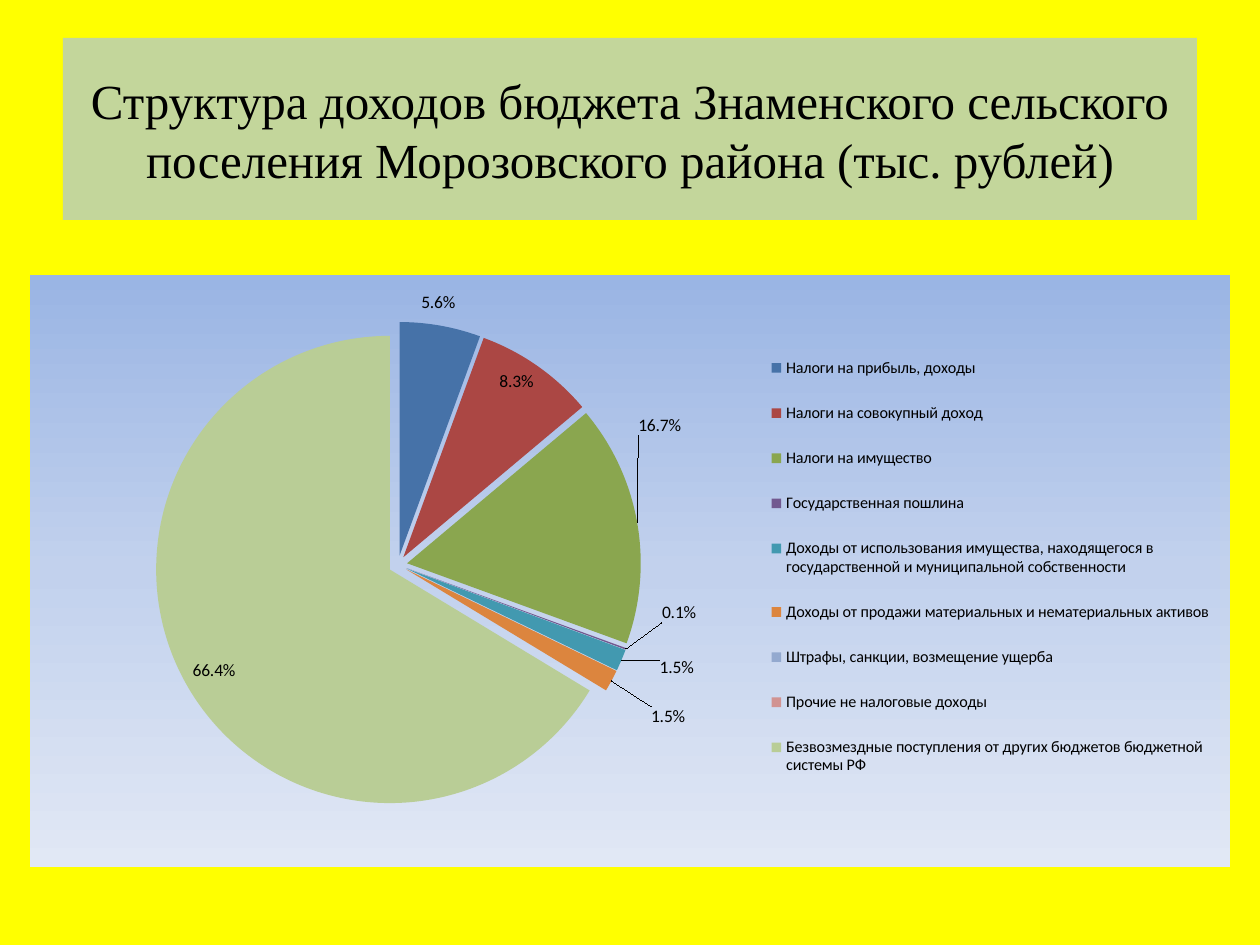
from pptx import Presentation
from pptx.chart.data import CategoryChartData
from pptx.dml.color import RGBColor
from pptx.enum.chart import XL_CHART_TYPE, XL_LABEL_POSITION, XL_LEGEND_POSITION
from pptx.enum.shapes import MSO_SHAPE
from pptx.enum.text import MSO_ANCHOR, PP_ALIGN
from pptx.oxml import parse_xml
from pptx.oxml.ns import nsdecls
from pptx.util import Pt

PIE = XL_CHART_TYPE.PIE
INSIDE_END = XL_LABEL_POSITION.INSIDE_END
LEGEND_RIGHT = XL_LEGEND_POSITION.RIGHT
RECTANGLE = MSO_SHAPE.RECTANGLE
MIDDLE = MSO_ANCHOR.MIDDLE
CENTER = PP_ALIGN.CENTER

EMU_PER_PX = 914400 / 126
YELLOW = RGBColor(0xFF, 0xFF, 0x00)
SAGE = RGBColor(0xC3, 0xD6, 0x9B)
BLACK = RGBColor(0x00, 0x00, 0x00)
BLUE = RGBColor(0x46, 0x72, 0xA8)
RED = RGBColor(0xAB, 0x47, 0x44)
GREEN = RGBColor(0x8A, 0xA6, 0x4F)
PURPLE = RGBColor(0x72, 0x59, 0x90)
TEAL = RGBColor(0x42, 0x99, 0xB0)
ORANGE = RGBColor(0xDC, 0x85, 0x3E)
PALE_BLUE = RGBColor(0x93, 0xA9, 0xCF)
PALE_RED = RGBColor(0xD1, 0x93, 0x92)
PALE_GREEN = RGBColor(0xB9, 0xCD, 0x96)
BACKDROP = {0: RGBColor(0x9A, 0xB5, 0xE4), 50: RGBColor(0xC2, 0xD1, 0xED),
            100: RGBColor(0xE1, 0xE8, 0xF5)}

TITLE = ("Структура доходов бюджета Знаменского сельского поселения "
         "Морозовского района (тыс. рублей)")
INCOME = [
    ("Налоги на прибыль, доходы", 0.056, BLUE),
    ("Налоги на совокупный доход", 0.083, RED),
    ("Налоги на имущество", 0.167, GREEN),
    ("Государственная пошлина", 0.001, PURPLE),
    ("Доходы от использования имущества, находящегося в "
     "государственной и муниципальной собственности", 0.015, TEAL),
    ("Доходы от продажи материальных и нематериальных активов", 0.015, ORANGE),
    ("Штрафы, санкции, возмещение ущерба", 0, PALE_BLUE),
    ("Прочие не налоговые доходы", 0, PALE_RED),
    ("Безвозмездные поступления от других бюджетов бюджетной "
     "системы РФ", 0.664, PALE_GREEN),
]
TITLE_AREA = (63, 38, 1134, 182)
CHART_AREA = (30, 275, 1200, 592)
PLOT_AREA = (64, 47, 608, 486)
LEGEND_AREA = (735, 57, 450, 470)
LABEL_SHIFTS = {0: (16, -40), 2: (51, -108), 3: (77, -24), 4: (79, 20), 5: (80, 49)}
PERCENT = "0.0%;;"
EXPLOSION = 4


def px(*lengths):
    """Turn pixel lengths into EMU."""
    return [round(length * EMU_PER_PX) for length in lengths]


def set_font(font, **values):
    """Set font attributes and the black text colour."""
    for name, value in values.items():
        setattr(font, name, value)
    font.color.rgb = BLACK


def add_title(page):
    """Add the filled title box."""
    box = page.shapes.add_shape(RECTANGLE, *px(*TITLE_AREA))
    box.shadow.inherit = False
    box.fill.solid()
    box.fill.fore_color.rgb = SAGE
    box.line.fill.background()
    frame = box.text_frame
    frame.word_wrap = True
    frame.vertical_anchor = MIDDLE
    para = frame.paragraphs[0]
    para.alignment = CENTER
    span = para.add_run()
    span.text = TITLE
    set_font(span.font, name="Times New Roman", size=Pt(28))


def set_layout(parent, index, area, target=""):
    """Place a chart part by pixel lengths within the chart area."""
    for old in parent.xpath("./c:layout"):
        parent.remove(old)
    names = ("x", "y", "w", "h")[:len(area)]
    sizes = CHART_AREA[2:] * 2
    modes = "" if len(area) == 2 else '<c:xMode val="edge"/><c:yMode val="edge"/>'
    values = "".join(f'<c:{name} val="{length / size:.4f}"/>'
                     for name, length, size in zip(names, area, sizes))
    parent.insert(index, parse_xml(
        f'<c:layout {nsdecls("c")}><c:manualLayout>{target}{modes}{values}'
        '</c:manualLayout></c:layout>'))


def fill_backdrop(chart):
    """Give the chart area its vertical gradient."""
    stops = "".join(f'<a:gs pos="{percent * 1000}"><a:srgbClr val="{color}"/></a:gs>'
                    for percent, color in BACKDROP.items())
    chart.element.xpath("./c:chart")[0].addnext(parse_xml(
        f'<c:spPr {nsdecls("c", "a")}><a:gradFill><a:gsLst>{stops}</a:gsLst>'
        '<a:lin ang="5400000" scaled="0"/></a:gradFill>'
        '<a:ln><a:noFill/></a:ln></c:spPr>'))


def style_slices(chart, series):
    """Colour the slices and pull them apart."""
    for index, (_, _, color) in enumerate(INCOME):
        fill = series.points[index].format.fill
        fill.solid()
        fill.fore_color.rgb = color
    chart.element.xpath(".//c:ser/c:dPt")[0].addprevious(
        parse_xml(f'<c:explosion {nsdecls("c")} val="{EXPLOSION}"/>'))


def label_slices(chart, series):
    """Show percentages and move the outer labels off their slices."""
    labels = series.data_labels
    for name, value in {"show_value": True, "number_format": PERCENT,
                        "number_format_is_linked": False,
                        "position": INSIDE_END}.items():
        setattr(labels, name, value)
    set_font(labels.font, name="Calibri", size=Pt(10))
    for index, shift in LABEL_SHIFTS.items():
        label = series.points[index].data_label
        set_font(label.font, name="Calibri", size=Pt(10))
        label.position = INSIDE_END
        element = chart.element.xpath(f'.//c:dLbl[c:idx/@val="{index}"]')[0]
        set_layout(element, 1, shift)
        element.insert(2, parse_xml(
            f'<c:numFmt {nsdecls("c")} formatCode="{PERCENT}" sourceLinked="0"/>'))


def add_legend(chart):
    """Add the legend on the right."""
    chart.has_legend = True
    legend = chart.legend
    legend.position = LEGEND_RIGHT
    legend.include_in_layout = False
    set_font(legend.font, name="Calibri", size=Pt(9.2))
    set_layout(chart.element.xpath(".//c:legend")[0], 1, LEGEND_AREA)


def add_income_chart(page):
    """Add the pie chart of budget income."""
    data = CategoryChartData(number_format="0.0%")
    data.categories = [name for name, _, _ in INCOME]
    data.add_series("Series 1", [share for _, share, _ in INCOME])
    chart = page.shapes.add_chart(PIE, *px(*CHART_AREA), data).chart
    chart.has_title = False
    set_font(chart.font, name="Calibri", size=Pt(10))
    plot = chart.plots[0]
    plot.vary_by_categories = True
    series = plot.series[0]
    style_slices(chart, series)
    label_slices(chart, series)
    add_legend(chart)
    set_layout(chart.element.xpath(".//c:plotArea")[0], 0, PLOT_AREA,
               '<c:layoutTarget val="inner"/>')
    fill_backdrop(chart)


def main():
    """Build and save the slide."""
    deck = Presentation()
    deck.slide_width, deck.slide_height = px(1260, 945)
    page = deck.slides.add_slide(deck.slide_layouts[6])
    page.background.fill.solid()
    page.background.fill.fore_color.rgb = YELLOW
    add_title(page)
    add_income_chart(page)
    deck.save("out.pptx")


if __name__ == "__main__":
    main()
